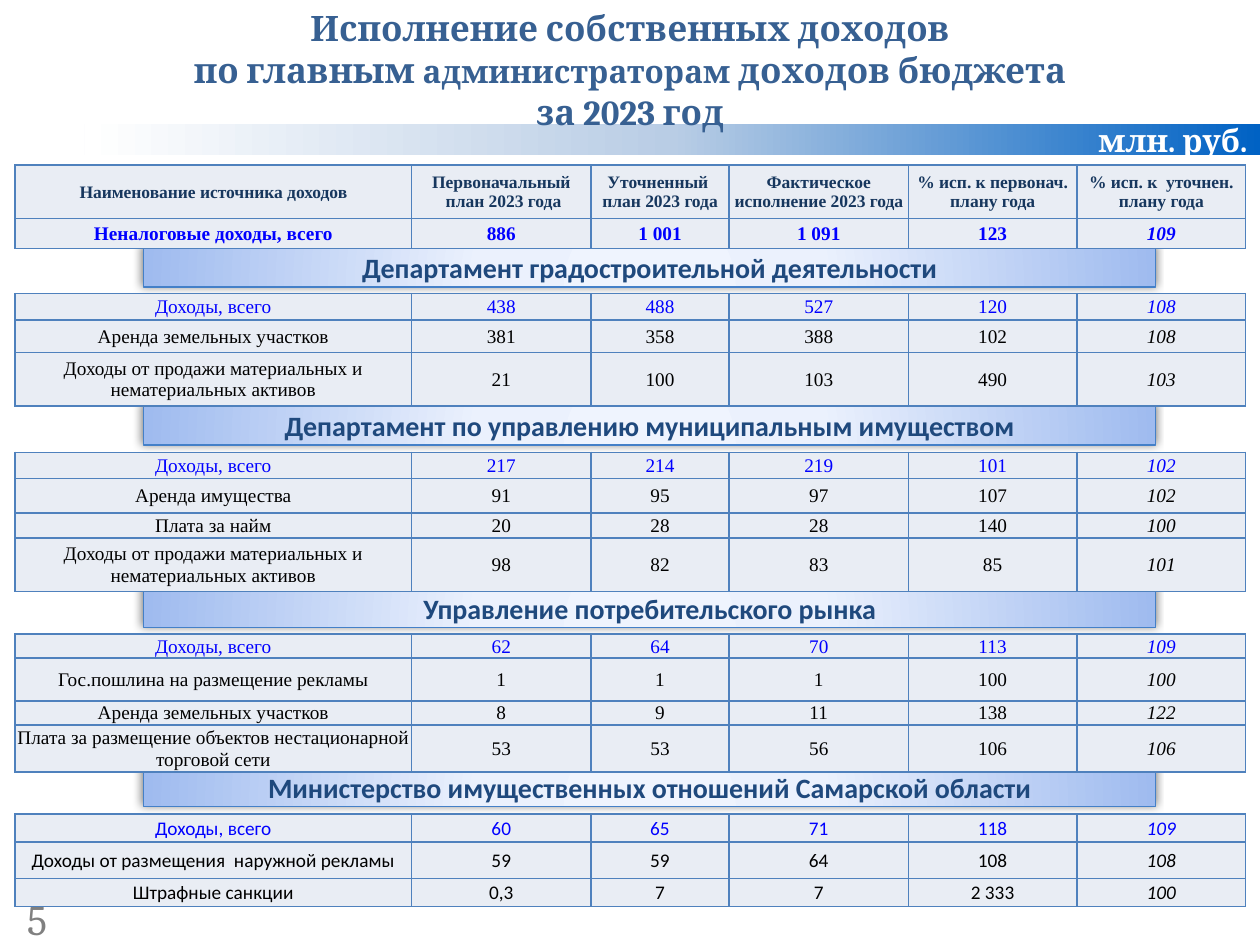
from dataclasses import dataclass

from pptx import Presentation
from pptx import util as u
from pptx.dml.color import RGBColor
from pptx.enum import shapes, text
from pptx.oxml import parse_xml
from pptx.oxml.ns import nsdecls, qn

HUE = {
    "title": "376092", "page": "808080", "white": "FFFFFF", "band": "1F497D",
    "edge": "4480C8", "grid": "4F81BD", "cell": "E9EDF4", "head": "17375E",
    "blue": "0000FF", "black": "000000",
}
SERIF, SANS, TIMES = "Cambria", "Calibri", "Times New Roman"
COLS = (8, 3.61, 2.79, 3.61, 3.4, 3.4)
LEFT = 0.3
MID = text.PP_ALIGN.CENTER
SUM = "Доходы, всего"
SALES = "Доходы от продажи материальных и нематериальных активов"
LAND = "Аренда земельных участков"

BAR = ([(0, "0062C4"), (50, "B9CDE5"), (100, "FFFFFF")], '<a:lin ang="10800000"/>')
GLOW = (
    [(0, "EFF4FE"), (34, "EBF1FD"), (100, "9FBBEF")],
    '<a:path path="circle"><a:fillToRect l="50000" t="155000" r="50000" b="-55000"/></a:path>',
)


@dataclass
class Row:
    high: float
    items: tuple
    hue: str = "black"
    size: float = 11
    bold: bool = False


@dataclass
class Block:
    top: float
    rows: list
    font: str = TIMES


@dataclass
class Band:
    top: float
    label: str


BLOCKS = [
    Block(3.33, [
        Row(1.07, ("Наименование источника доходов", "Первоначальный\n план 2023 года",
                   "Уточненный \nплан 2023 года", "Фактическое исполнение 2023 года",
                   "% исп. к первонач. плану года", "% исп. к  уточнен. плану года"),
            "head", 10, True),
        Row(0.61, ("Неналоговые доходы, всего", "886", "1 001", "1 091", "123", "109"),
            "blue", 11, True),
    ]),
    Block(5.92, [
        Row(0.53, (SUM, "438", "488", "527", "120", "108"), "blue"),
        Row(0.66, (LAND, "381", "358", "388", "102", "108")),
        Row(1.07, (SALES, "21", "100", "103", "490", "103")),
    ]),
    Block(9.12, [
        Row(0.53, (SUM, "217", "214", "219", "101", "102"), "blue"),
        Row(0.69, ("Аренда имущества", "91", "95", "97", "107", "102")),
        Row(0.51, ("Плата за найм", "20", "28", "28", "140", "100")),
        Row(1.07, (SALES, "98", "82", "83", "85", "101")),
    ]),
    Block(12.78, [
        Row(0.43, (SUM, "62", "64", "70", "113", "109"), "blue"),
        Row(0.86, ("Гос.пошлина на размещение рекламы", "1", "1", "1", "100", "100")),
        Row(0.43, (LAND, "8", "9", "11", "138", "122")),
        Row(0.86, ("Плата за размещение объектов нестационарной торговой сети",
                   "53", "53", "56", "106", "106")),
    ]),
    Block(16.41, [
        Row(0.56, (SUM, "60", "65", "71", "118", "109"), "blue"),
        Row(0.74, ("Доходы от размещения  наружной рекламы", "59", "59", "64", "108", "108")),
        Row(0.56, ("Штрафные санкции", "0,3", "7", "7", "2 333", "100")),
    ], SANS),
]

BANDS = [
    Band(8.18, "Департамент по управлению муниципальным имуществом"),
    Band(5, "Департамент градостроительной деятельности"),
    Band(11.86, "Управление потребительского рынка"),
    Band(15.47, "Министерство имущественных отношений Самарской области"),
]


def add_run(para, words: str, hue: str, **form) -> None:
    run = para.add_run()
    run.text = words
    for key, val in form.items():
        setattr(run.font, key, val)
    run.font.color.rgb = RGBColor.from_string(HUE[hue])


def write(frame, words: str, align, hue: str, **form) -> None:
    for i, line in enumerate(words.split("\n")):
        para = frame.add_paragraph() if i else frame.paragraphs[0]
        para.alignment = align
        add_run(para, line, hue, **form)


def shade(shape, stops: list, kind: str) -> None:
    shape.fill.background()
    props = shape.element.spPr
    marks = "".join(
        f'<a:gs pos="{pos * 1000}"><a:srgbClr val="{hue}"/></a:gs>' for pos, hue in stops)
    grad = parse_xml(f'<a:gradFill {nsdecls("a")} rotWithShape="1">'
                     f'<a:gsLst>{marks}</a:gsLst>{kind}</a:gradFill>')
    props.replace(props.find(qn("a:noFill")), grad)


def add_rect(slide, box: tuple, grad: tuple):
    rect = slide.shapes.add_shape(shapes.MSO_SHAPE.RECTANGLE, *map(u.Cm, box))
    rect.shadow.inherit = False
    rect.line.fill.background()
    shade(rect, *grad)
    rect.text_frame.word_wrap = True
    rect.text_frame.vertical_anchor = text.MSO_ANCHOR.MIDDLE
    return rect


def add_band(slide, band: Band) -> None:
    rect = add_rect(slide, (2.9, band.top, 20.4, 0.79), GLOW)
    rect.line.color.rgb = RGBColor.from_string(HUE["edge"])
    rect.line.width = u.Pt(0.75)
    rect.element.spPr.find(qn("a:effectLst")).append(parse_xml(
        f'<a:outerShdw {nsdecls("a")} blurRad="{u.Pt(5)}" dist="{u.Pt(2)}" dir="14700000">'
        '<a:srgbClr val="000000"><a:alpha val="50000"/></a:srgbClr></a:outerShdw>'))
    write(rect.text_frame, band.label, MID, "band", size=u.Pt(16), name=SANS, bold=True)


def style(cell) -> None:
    props = cell._tc.get_or_add_tcPr()
    for side in "LRTB":
        props.append(parse_xml(
            f'<a:ln{side} {nsdecls("a")} w="{u.Pt(1)}"><a:solidFill>'
            f'<a:srgbClr val="{HUE["grid"]}"/></a:solidFill></a:ln{side}>'))
    cell.fill.solid()
    cell.fill.fore_color.rgb = RGBColor.from_string(HUE["cell"])
    form = {"margin_left": 0.02, "margin_right": 0.02, "margin_top": 0.02, "margin_bottom": 0}
    for key, val in form.items():
        setattr(cell, key, u.Cm(val))
    cell.vertical_anchor = text.MSO_ANCHOR.MIDDLE


def add_block(slide, block: Block) -> None:
    high = sum(row.high for row in block.rows)
    box = map(u.Cm, (LEFT, block.top, sum(COLS), high))
    grid = slide.shapes.add_table(len(block.rows), len(COLS), *box).table
    grid.first_row = grid.horz_banding = False
    for col, wide in zip(grid.columns, COLS):
        col.width = u.Cm(wide)
    for r, row in enumerate(block.rows):
        grid.rows[r].height = u.Cm(row.high)
        for c, words in enumerate(row.items):
            cell = grid.cell(r, c)
            style(cell)
            slant = c == len(COLS) - 1 and row.hue != "head"
            write(cell.text_frame, words, MID, row.hue, size=u.Pt(row.size),
                  name=block.font, bold=row.bold, italic=slant)


def add_title(slide) -> None:
    frame = slide.shapes.add_textbox(0, 0, u.Cm(25.4), u.Cm(2.82)).text_frame
    frame.word_wrap = True
    form = {"name": SERIF, "bold": True}
    write(frame, "Исполнение собственных доходов\nпо главным ", MID, "title",
          size=u.Pt(20), **form)
    para = frame.paragraphs[1]
    add_run(para, "администраторам", "title", size=u.Pt(18), **form)
    add_run(para, " доходов бюджета", "title", size=u.Pt(20), **form)
    para.add_line_break()
    add_run(para, "за 2023 год", "title", size=u.Pt(20), **form)


def main() -> None:
    deck = Presentation()
    deck.slide_width, deck.slide_height = u.Cm(25.4), u.Cm(19.05)
    slide = deck.slides.add_slide(deck.slide_layouts[6])
    bar = add_rect(slide, (1.7, 2.51, 23.7, 0.61), BAR)
    write(bar.text_frame, "млн. руб.", text.PP_ALIGN.RIGHT, "white",
          size=u.Pt(18), name=SERIF, bold=True)
    page = slide.shapes.add_textbox(*map(u.Cm, (LEFT, 17.88, 0.79, 1.27)))
    write(page.text_frame, "5", text.PP_ALIGN.LEFT, "page", size=u.Pt(24), name=SERIF)
    add_title(slide)
    for band in BANDS:
        add_band(slide, band)
    for block in BLOCKS:
        add_block(slide, block)
    deck.save("out.pptx")


if __name__ == "__main__":
    main()
